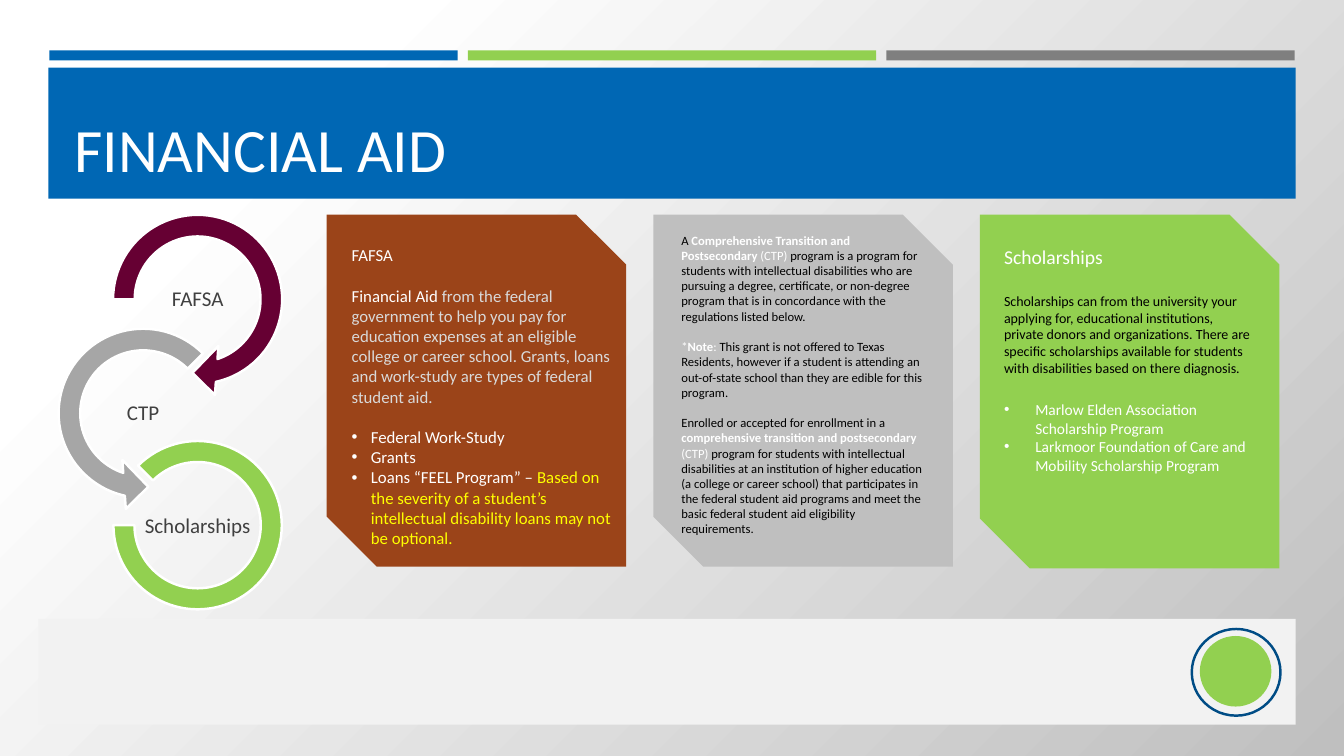
import pptx
import pptx.util
import pptx.dml.color
import pptx.enum.shapes
import pptx.enum.text
import pptx.oxml.ns
import lxml.etree

RGBColor = pptx.dml.color.RGBColor
Shape = pptx.enum.shapes.MSO_SHAPE
Anchor = pptx.enum.text.MSO_ANCHOR
Align = pptx.enum.text.PP_ALIGN
inch = pptx.util.Inches

BLUE = RGBColor(0x00, 0x67, 0xB4)
NAVY = RGBColor(0x00, 0x4C, 0x85)
GREEN = RGBColor(0x92, 0xD0, 0x50)
MAROON = RGBColor(0x66, 0x00, 0x33)
RUST = RGBColor(0x9B, 0x44, 0x19)
YELLOW = RGBColor(0xFF, 0xFF, 0x00)
WHITE = RGBColor(0xFF, 0xFF, 0xFF)
BLACK = RGBColor(0x00, 0x00, 0x00)
CHARCOAL = RGBColor(0x40, 0x40, 0x40)
GREY = RGBColor(0x7F, 0x7F, 0x7F)
RING_GREY = RGBColor(0xA6, 0xA6, 0xA6)
SILVER = RGBColor(0xBF, 0xBF, 0xBF)
PALE = RGBColor(0xD9, 0xD9, 0xD9)
MIST = RGBColor(0xF2, 0xF2, 0xF2)
FONT = "Calibri"

TITLE = "FINANCIAL AID"
STRIPES = [BLUE, GREEN, GREY]

RINGS = [
    ("FAFSA", Shape.CIRCULAR_ARROW, MAROON, 1.96, 1.95, 0, (0.11, 11.42, 45, 108, 1 / 8)),
    ("CTP", Shape.LEFT_CIRCULAR_ARROW, RING_GREY, 1.42, 1.95, 0, (0.11, 11.42, 63, 189, 1 / 8)),
    ("Scholarships", Shape.BLOCK_ARC, GREEN, 1.96, 1.67, -0.02, (135, 108, 1 / 8)),
]

FAFSA = [
    (12, 0, 0, [("FAFSA", WHITE, False)]),
    (12, 14.6, 0, [
        ("Financial Aid ", WHITE, False),
        ("from the federal government to help you pay for education expenses at an eligible "
         "college or career school. Grants, loans and work-study are types of federal "
         "student aid.", PALE, False)]),
    (12, 14.6, 0.19, [("Federal Work-Study", WHITE, False)]),
    (12, 0, 0.19, [("Grants", WHITE, False)]),
    (12, 0, 0.19, [
        ("Loans “FEEL Program” – ", WHITE, False),
        ("Based on the severity of a student’s intellectual disability loans may not be "
         "optional.", YELLOW, False)]),
]
CTP = [
    (9, 0, 0, [
        ("A ", BLACK, False),
        ("Comprehensive Transition and Postsecondary ", WHITE, True),
        ("(CTP) ", WHITE, False),
        ("program is a program for students with intellectual disabilities who are pursuing "
         "a degree, certificate, or non-degree program that is in concordance with the "
         "regulations listed below.", BLACK, False)]),
    (9, 11, 0, [
        ("*", WHITE, False), ("Note", WHITE, True), (": ", WHITE, False),
        ("This grant is not offered to Texas Residents, however if a student is attending an "
         "out-of-state school than they are edible for this program.", BLACK, False)]),
    (9, 11, 0, [
        ("Enrolled or accepted for enrollment in a ", BLACK, False),
        ("comprehensive transition and postsecondary ", WHITE, True),
        ("(CTP) ", WHITE, False),
        ("program for students with intellectual disabilities at an institution of higher "
         "education (a college or career school) that participates in the federal student "
         "aid programs and meet the basic federal student aid eligibility requirements.",
         BLACK, False)]),
]
SCHOLARSHIPS = [
    (14, 0, 0, [("Scholarships", WHITE, False)]),
    (10, 17, 0, [
        ("Scholarships can from the university your applying for, educational institutions, "
         "private donors and organizations. There are specific scholarships available for "
         "students with disabilities based on there diagnosis.", BLACK, False)]),
    (11, 17, 0.31, [("Marlow Elden Association Scholarship Program", WHITE, False)]),
    (11, 0, 0.31, [
        ("Larkmoor Foundation of Care and Mobility Scholarship Program", WHITE, False)]),
]
CARDS = [
    (RUST, 3.49, FAFSA, (0.15, 0.25, 2.83, 3.5)),
    (SILVER, 3.49, CTP, (0.18, 0.13, 2.63, 3.13)),
    (GREEN, 3.51, SCHOLARSHIPS, (0.14, 0.25, 2.64, 4.39)),
]

STRIPE_LEFT, STRIPE_PITCH = 0.49, 4.15
CARD_LEFT, CARD_TOP, CARD_PITCH = 3.24, 2.13, 3.24
RING_MIDDLE, RING_PITCH = 2.97, 1.13
LABEL_WIDTH, LABEL_HEIGHT = 1.08, 0.54


def add_figure(slide, kind, box, fill=None, line=None, adjustments=()):
    figure = slide.shapes.add_shape(kind, *map(inch, box))
    figure.shadow.inherit = False
    for index, value in enumerate(adjustments):
        figure.adjustments[index] = value
    if fill is None:
        figure.fill.background()
    else:
        figure.fill.solid()
        figure.fill.fore_color.rgb = fill
    if line is None:
        figure.line.fill.background()
    else:
        figure.line.color.rgb = line
        figure.line.width = pptx.util.Pt(1.75)
    return figure


def add_bullet(paragraph, indent):
    properties = paragraph._p.get_or_add_pPr()
    properties.set("marL", str(inch(indent)))
    properties.set("indent", str(-inch(indent)))
    font = lxml.etree.SubElement(properties, pptx.oxml.ns.qn("a:buFont"))
    font.set("typeface", "Arial")
    bullet = lxml.etree.SubElement(properties, pptx.oxml.ns.qn("a:buChar"))
    bullet.set("char", "•")


def add_text(slide, box, paragraphs, anchor=Anchor.TOP, align=Align.LEFT):
    frame = slide.shapes.add_textbox(*map(inch, box)).text_frame
    frame.word_wrap = True
    frame.vertical_anchor = anchor
    for index, (size, gap, indent, pieces) in enumerate(paragraphs):
        paragraph = frame.add_paragraph() if index else frame.paragraphs[0]
        paragraph.alignment = align
        paragraph.space_before = pptx.util.Pt(gap)
        if indent:
            add_bullet(paragraph, indent)
        for words, color, bold in pieces:
            run = paragraph.add_run()
            run.text = words
            run.font.name = FONT
            run.font.size = pptx.util.Pt(size)
            run.font.bold = bold
            run.font.color.rgb = color
    return frame


def add_background(slide):
    fill = slide.background.fill
    fill.gradient()
    fill.gradient_angle = 315
    for stop, position, color in zip(fill.gradient_stops, (0.19, 1), (WHITE, SILVER)):
        stop.position = position
        stop.color.rgb = color


def add_header(slide):
    for column, color in enumerate(STRIPES):
        left = STRIPE_LEFT + column * STRIPE_PITCH
        add_figure(slide, Shape.RECTANGLE, (left, 0.5, 4.05, 0.1), color)
    add_figure(slide, Shape.RECTANGLE, (0.48, 0.67, 12.37, 1.3), BLUE)
    add_text(slide, (0.64, 0.77, 12.06, 1.11), [(44, 0, 0, [(TITLE, WHITE, False)])],
             Anchor.BOTTOM)


def add_footer(slide):
    add_figure(slide, Shape.RECTANGLE, (0.38, 6.14, 12.47, 1.05), MIST)
    add_figure(slide, Shape.OVAL, (11.82, 6.24, 0.88, 0.86), line=NAVY)
    add_figure(slide, Shape.OVAL, (11.9, 6.31, 0.71, 0.7), GREEN)


def add_rings(slide):
    for row, (label, kind, color, center, size, shift, adjustments) in enumerate(RINGS):
        middle = RING_MIDDLE + row * RING_PITCH
        ring_box = (center - size / 2, middle + shift - size / 2, size, size)
        add_figure(slide, kind, ring_box, color, WHITE, adjustments)
        label_box = (center - LABEL_WIDTH / 2, middle - LABEL_HEIGHT / 2,
                     LABEL_WIDTH, LABEL_HEIGHT)
        frame = add_text(slide, label_box, [(15, 0, 0, [(label, CHARCOAL, False)])],
                         Anchor.MIDDLE, Align.CENTER)
        frame.margin_left = frame.margin_right = inch(0.01)
        frame.margin_top = frame.margin_bottom = inch(0.01)
        frame.paragraphs[0].line_spacing = 0.9


def add_cards(slide):
    for column, (color, height, paragraphs, (dx, dy, width, depth)) in enumerate(CARDS):
        left = CARD_LEFT + column * CARD_PITCH
        add_figure(slide, Shape.SNIP_2_DIAG_RECTANGLE, (left, CARD_TOP, 2.97, height), color)
        add_text(slide, (left + dx, CARD_TOP + dy, width, depth), paragraphs)


def main():
    deck = pptx.Presentation()
    deck.slide_width, deck.slide_height = inch(13.33), inch(7.5)
    slide = deck.slides.add_slide(deck.slide_layouts[6])
    for add_part in (add_background, add_header, add_footer, add_rings, add_cards):
        add_part(slide)
    deck.save("out.pptx")


if __name__ == "__main__":
    main()
